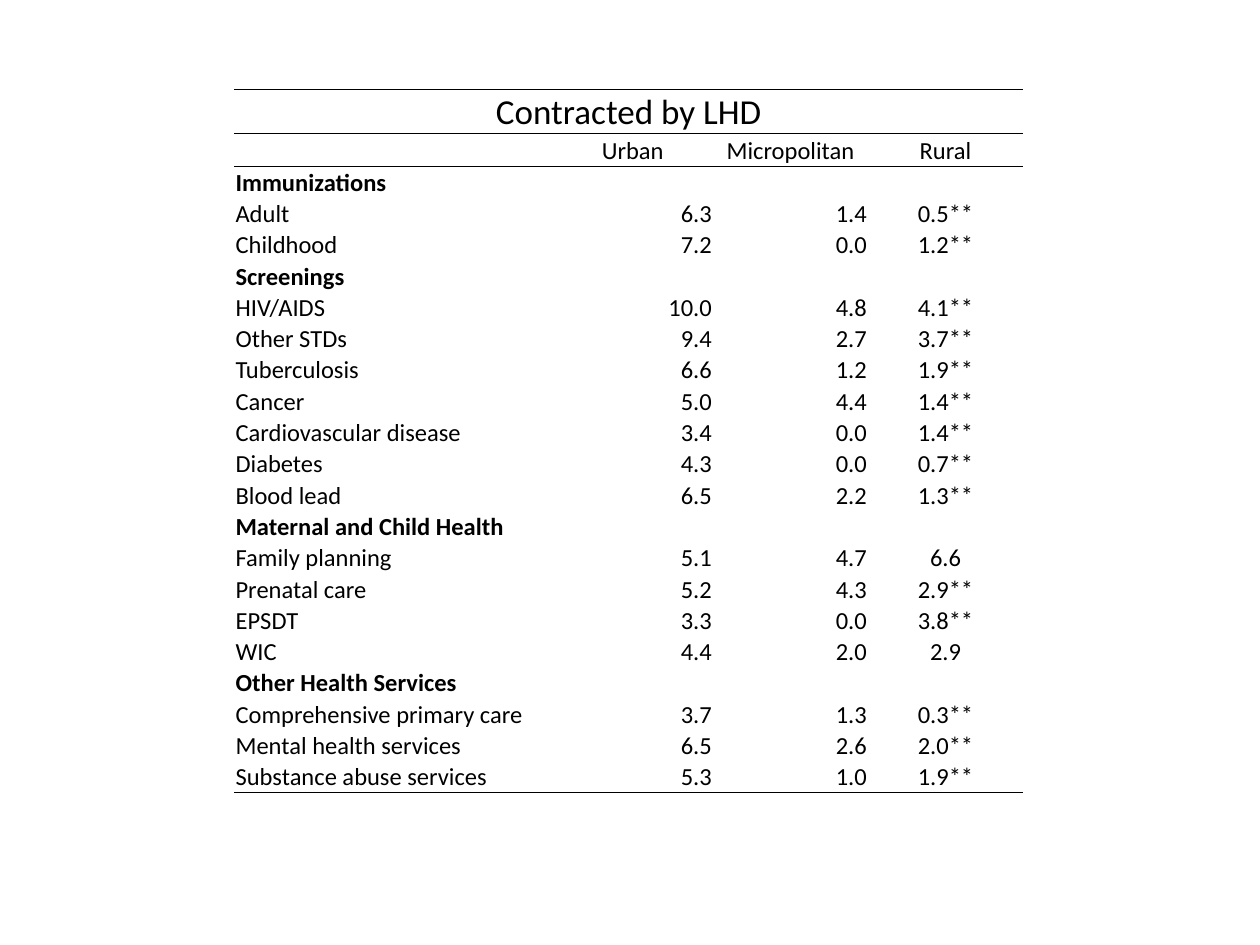
from pptx import Presentation
from pptx.util import Inches, Pt
from pptx.dml.color import RGBColor
from pptx.enum.text import PP_ALIGN, MSO_ANCHOR
from pptx.oxml.ns import qn
from lxml.etree import SubElement

BLACK = RGBColor(0, 0, 0)
FONT = "Calibri"
TITLE = "Contracted by LHD"
HEADS = ["", "Urban ", "Micropolitan", "Rural"]
GROUPS = {
    "Immunizations": [
        ("Adult", "6.3", "1.4", "0.5**"),
        ("Childhood", "7.2", "0.0", "1.2**"),
    ],
    "Screenings": [
        ("HIV/AIDS", "10.0", "4.8", "4.1**"),
        ("Other STDs", "9.4", "2.7", "3.7**"),
        ("Tuberculosis", "6.6", "1.2", "1.9**"),
        ("Cancer", "5.0", "4.4", "1.4**"),
        ("Cardiovascular disease", "3.4", "0.0", "1.4**"),
        ("Diabetes", "4.3", "0.0", "0.7**"),
        ("Blood lead", "6.5", "2.2", "1.3**"),
    ],
    "Maternal and Child Health": [
        ("Family planning", "5.1", "4.7", "6.6"),
        ("Prenatal care", "5.2", "4.3", "2.9**"),
        ("EPSDT", "3.3", "0.0", "3.8**"),
        ("WIC", "4.4", "2.0", "2.9"),
    ],
    "Other Health Services": [
        ("Comprehensive primary care", "3.7", "1.3", "0.3**"),
        ("Mental health services", "6.5", "2.6", "2.0**"),
        ("Substance abuse services", "5.3", "1.0", "1.9**"),
    ],
}
WIDTHS = [2.57, 1.23, 1.23, 1.23]
LEFT, TOP, HEIGHT = 1.86, 0.71, 5.58
TITLE_H, HEAD_H = 0.35, 0.26
HEAD_ALIGN = [PP_ALIGN.CENTER] * 4
BODY_ALIGN = [PP_ALIGN.LEFT, PP_ALIGN.RIGHT, PP_ALIGN.RIGHT, PP_ALIGN.CENTER]


def set_lines(cell, ruled):
    props = cell._tc.get_or_add_tcPr()
    for side in ("lnL", "lnR", "lnT", "lnB"):
        line = SubElement(props, qn("a:" + side), w=str(Pt(1)))
        if side in ruled:
            fill = SubElement(line, qn("a:solidFill"))
            SubElement(fill, qn("a:srgbClr"), val=str(BLACK))
        else:
            SubElement(line, qn("a:noFill"))


def fill_cell(cell, text, size, align, bold, ruled):
    set_lines(cell, ruled)
    cell.fill.background()
    cell.vertical_anchor = MSO_ANCHOR.BOTTOM
    cell.margin_left = cell.margin_right = cell.margin_top = Inches(0.01)
    cell.margin_bottom = 0
    para = cell.text_frame.paragraphs[0]
    para.alignment = align
    if not text:
        SubElement(para._p, qn("a:endParaRPr"), sz=str(size * 100))
        return
    para.text = text
    font = para.runs[0].font
    font.name, font.size, font.bold = FONT, Pt(size), bold
    font.color.rgb = BLACK


def main():
    deck = Presentation()
    deck.slide_width, deck.slide_height = Inches(10), Inches(7.5)
    slide = deck.slides.add_slide(deck.slide_layouts[6])

    rows = [(TITLE, "", "", ""), HEADS]
    for group, items in GROUPS.items():
        rows += [(group, "", "", ""), *items]
    last = len(rows) - 1
    body_h = (HEIGHT - TITLE_H - HEAD_H) / (len(rows) - 2)
    heights = [TITLE_H, HEAD_H] + [body_h] * (len(rows) - 2)

    frame = slide.shapes.add_table(
        len(rows), len(WIDTHS), Inches(LEFT), Inches(TOP),
        Inches(sum(WIDTHS)), Inches(HEIGHT))
    table = frame.table
    table.first_row = table.horz_banding = False
    for col, width in zip(table.columns, WIDTHS):
        col.width = Inches(width)
    for row, height in zip(table.rows, heights):
        row.height = Inches(height)

    table.cell(0, 0).merge(table.cell(0, 3))
    for r, texts in enumerate(rows):
        ruled = ["lnT"] if r <= 2 else []
        if r in (0, 1, last):
            ruled.append("lnB")
        size = 20 if r == 0 else 14
        aligns = HEAD_ALIGN if r < 2 else BODY_ALIGN
        bold = texts[0] in GROUPS
        for c, text in enumerate(texts):
            fill_cell(table.cell(r, c), text, size, aligns[c], bold, ruled)

    deck.save("out.pptx")


if __name__ == "__main__":
    main()
